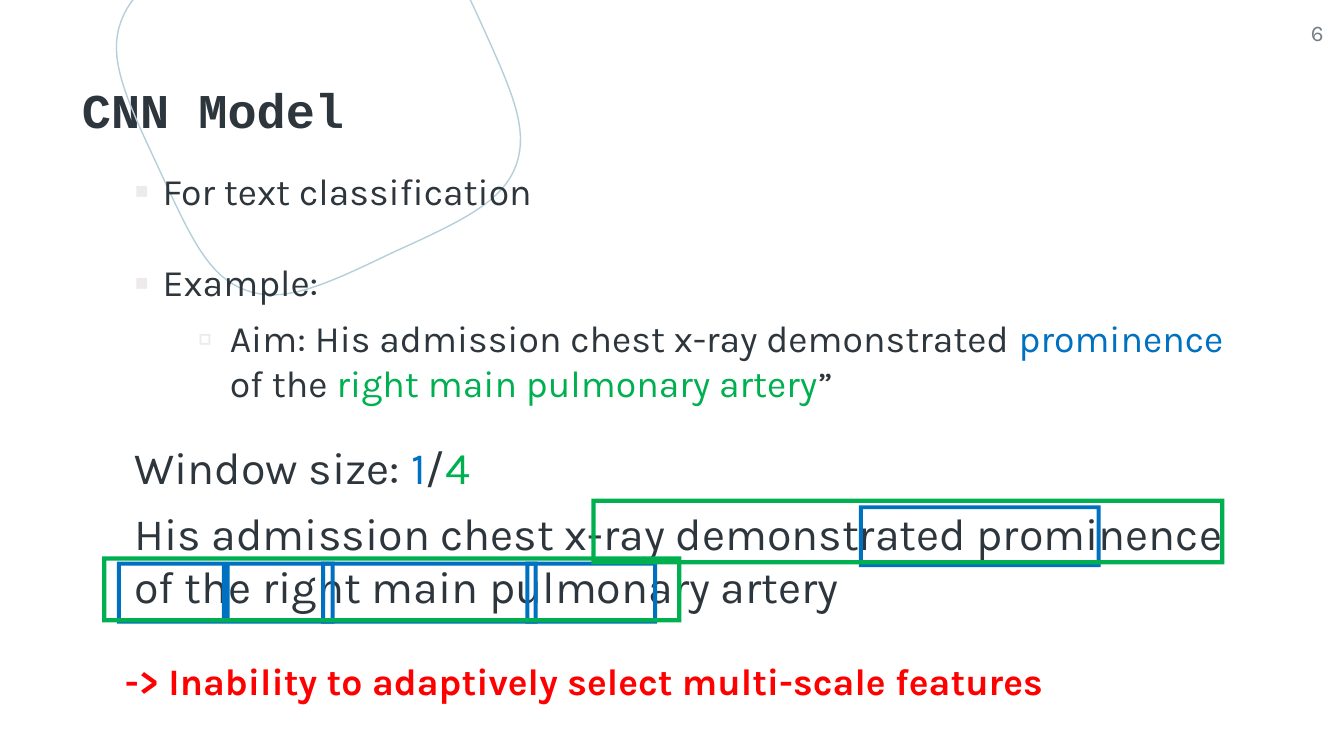
"""Build the CNN Model slide with its sliding-window frames."""
import pptx
import pptx.util
import pptx.dml.color
import pptx.enum.shapes
import pptx.enum.text
import pptx.oxml.ns
import lxml.etree

Inches = pptx.util.Inches
RGB = pptx.dml.color.RGBColor
ALIGN = pptx.enum.text.PP_ALIGN
ANCHOR = pptx.enum.text.MSO_ANCHOR
INK = RGB(0x2E, 0x36, 0x3D)
GREY = RGB(0x76, 0x7E, 0x85)
PALE = RGB(0xEE, 0xEA, 0xEA)
MIST = RGB(0xB5, 0xCF, 0xDA)
BLUE = RGB(0x00, 0x70, 0xC0)
GREEN = RGB(0x00, 0xB0, 0x50)
RED = RGB(0xFF, 0x00, 0x00)

deck = pptx.Presentation()
deck.slide_width = Inches(10)
deck.slide_height = deck.slide_width * 9 // 16
slide = deck.slides.add_slide(deck.slide_layouts[5])
shapes = slide.shapes


def fill_text(shape, lines, size, font="Karla", bold=False, align=ALIGN.LEFT, anchor=ANCHOR.TOP):
    frame = shape.text_frame
    frame.word_wrap = True
    frame.auto_size = pptx.enum.text.MSO_AUTO_SIZE.NONE
    frame.vertical_anchor = anchor
    frame.margin_left = frame.margin_right = frame.margin_top = frame.margin_bottom = 0
    for spot, line in enumerate(lines):
        para = frame.add_paragraph() if spot else frame.paragraphs[0]
        para.alignment = align
        for words, color in line:
            run = para.add_run()
            run.text = words
            run.font.name = font
            run.font.size = pptx.util.Pt(size)
            run.font.bold = bold
            run.font.color.rgb = color
    return frame


def add_bullet(para, mark, left):
    props = para._p.get_or_add_pPr()
    props.set("marL", str(Inches(left)))
    props.set("indent", str(Inches(-0.24)))
    tint = lxml.etree.SubElement(props, pptx.oxml.ns.qn("a:buClr"))
    lxml.etree.SubElement(tint, pptx.oxml.ns.qn("a:srgbClr")).set("val", str(PALE))
    lxml.etree.SubElement(props, pptx.oxml.ns.qn("a:buFont")).set("typeface", "Karla")
    lxml.etree.SubElement(props, pptx.oxml.ns.qn("a:buChar")).set("char", mark)


curves = [
    (3.45, 1.64, 3.74, 1.5, 3.84, 1.23), (3.94, 0.95, 3.8, 0.66, 3.56, 0.13),
    (3.32, -0.39, 3.18, -0.68, 2.9, -0.78), (2.63, -0.88, 2.33, -0.74, 1.81, -0.5),
    (1.29, -0.26, 1, -0.12, 0.9, 0.16), (0.8, 0.43, 0.93, 0.72, 1.18, 1.25),
    (1.42, 1.77, 1.55, 2.06, 1.83, 2.16), (2.11, 2.26, 2.4, 2.13, 2.92, 1.88),
]
start = (2.92, 1.88)
steps = 16
points = []
x, y = start
for ax, ay, bx, by, cx, cy in curves:
    for step in range(1, steps + 1):
        t = step / steps
        u = 1 - t
        points.append((
            Inches(u**3 * x + 3 * u * u * t * ax + 3 * u * t * t * bx + t**3 * cx),
            Inches(u**3 * y + 3 * u * u * t * ay + 3 * u * t * t * by + t**3 * cy),
        ))
    x, y = cx, cy
pen = shapes.build_freeform(Inches(start[0]), Inches(start[1]))
pen.add_line_segments(points, close=True)
blob = pen.convert_to_shape()
blob.shadow.inherit = False
blob.fill.background()
blob.line.color.rgb = MIST
blob.line.width = pptx.util.Pt(0.75)

quote = shapes.add_textbox(Inches(1), Inches(3.76), Inches(8.35), Inches(1))
words = "His admission chest x-ray demonstrated prominence of the right main pulmonary artery"
fill_text(quote, [[(words, INK)]], 24)

title = shapes.title
title.left, title.top = Inches(0.61), Inches(0.56)
title.width, title.height = Inches(3.09), Inches(0.5)
fill_text(title, [[("CNN Model", INK)]], 26, "Courier New", True, anchor=ANCHOR.MIDDLE)

page = shapes.add_textbox(Inches(9.25), Inches(0.14), Inches(0.6), Inches(0.43))
fill_text(page, [[("6", GREY)]], 12, align=ALIGN.RIGHT)

topic = shapes.add_textbox(Inches(1), Inches(1.25), Inches(8.35), Inches(0.48))
frame = fill_text(topic, [[("For text classification", INK)]], 20)
add_bullet(frame.paragraphs[0], "▪", 0.21)

sample = shapes.add_textbox(Inches(1), Inches(1.93), Inches(8.35), Inches(1.29))
aim = [
    ("Aim: His admission chest x-ray demonstrated ", INK), ("prominence ", BLUE),
    ("of the ", INK), ("right main pulmonary artery", GREEN), ("”", INK),
]
frame = fill_text(sample, [[("Example:", INK)], aim], 20)
first, second = frame.paragraphs
second.level = 1
second.space_before = pptx.util.Pt(6)
add_bullet(first, "▪", 0.21)
add_bullet(second, "▫", 0.71)

window = shapes.add_textbox(Inches(1), Inches(3.27), Inches(8.35), Inches(0.39))
fill_text(window, [[("Window size: ", INK), ("1", BLUE), ("/", INK), ("4", GREEN)]], 24)

boxes = [
    (6.39, 3.76, 1.8, 0.46, BLUE),
    (0.87, 4.18, 0.81, 0.46, BLUE),
    (1.68, 4.18, 0.81, 0.46, BLUE),
    (2.39, 4.18, 1.61, 0.46, BLUE),
    (3.91, 4.18, 0.98, 0.46, BLUE),
    (4.4, 3.71, 4.71, 0.49, GREEN),
    (0.76, 4.14, 4.31, 0.49, GREEN),
]
for left, top, width, height, color in boxes:
    box = shapes.add_shape(
        pptx.enum.shapes.MSO_SHAPE.FRAME,
        Inches(left), Inches(top), Inches(width), Inches(height),
    )
    box.adjustments[0] = 0.065
    box.shadow.inherit = False
    box.fill.solid()
    box.fill.fore_color.rgb = color
    box.line.fill.background()

close = shapes.add_textbox(Inches(0.93), Inches(4.9), Inches(8.35), Inches(0.48))
fill_text(close, [[("-> Inability to adaptively select multi-scale features", RED)]], 20, bold=True)

deck.save("out.pptx")
